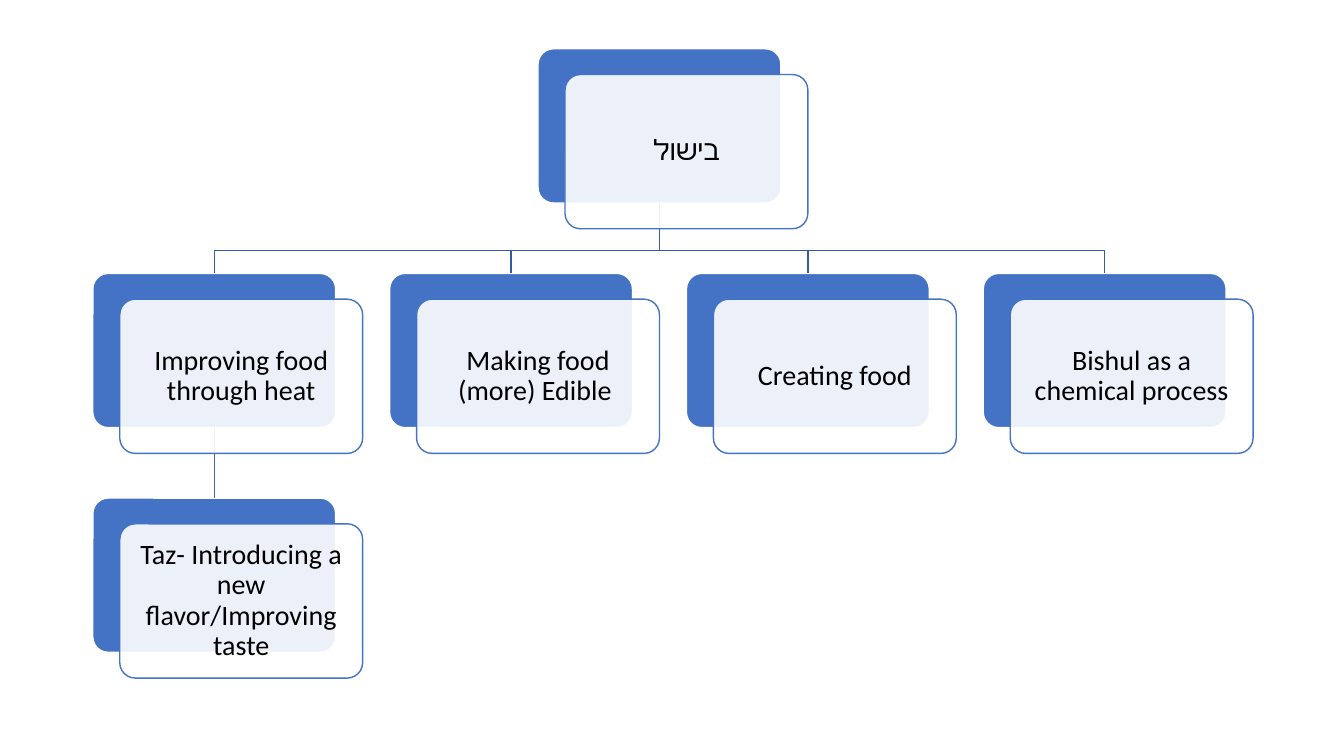
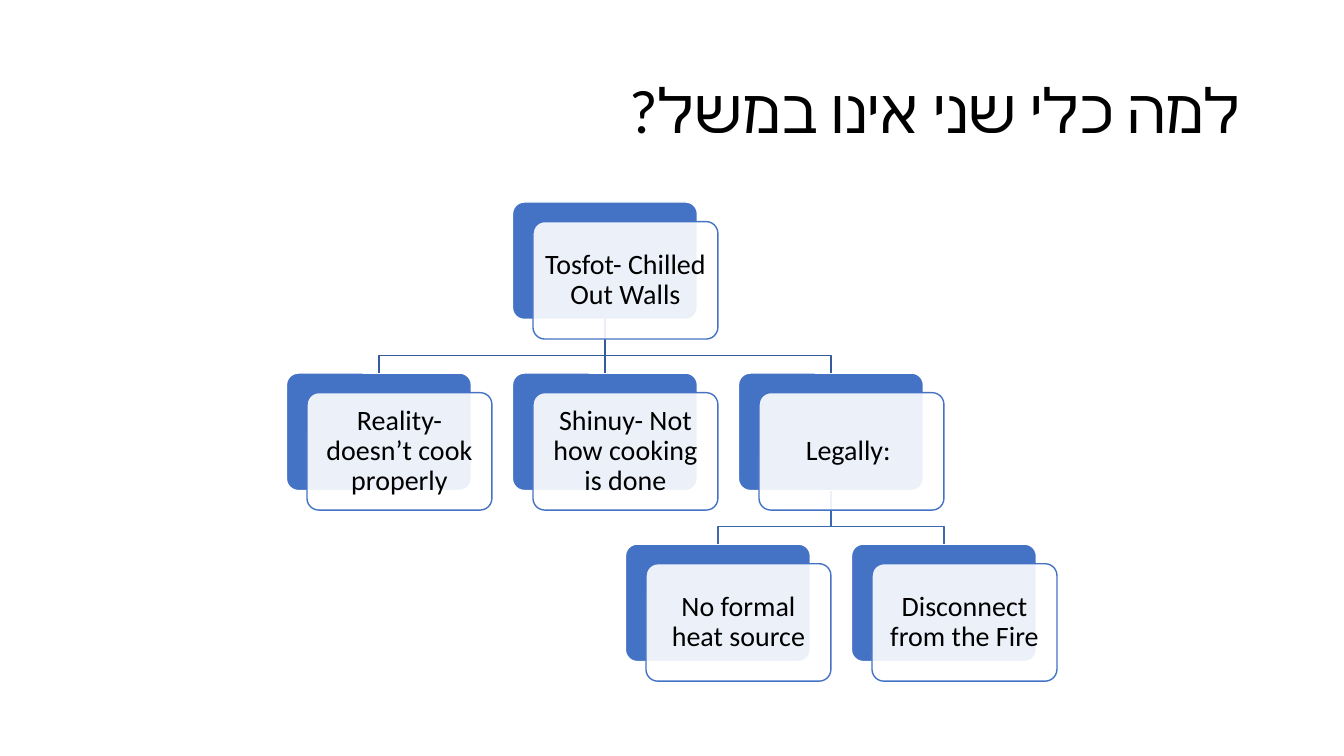
import pptx
import pptx.dml.color
import pptx.enum.shapes
import pptx.enum.text
import pptx.oxml
import pptx.oxml.ns
import pptx.util

Cm = pptx.util.Cm
Pt = pptx.util.Pt

FONT = "Calibri"
ACCENT = "4472C4"
WHITE = "FFFFFF"
BLACK = "000000"
LINK_COLOURS = ["365B9D", "3E67B2"]

CARD_HEIGHT = 0.635
COLUMN_PITCH = 11 / 9
ROW_PITCH = 0.925
OFFSET_X = 1 / 9
OFFSET_Y = 0.106
BEND = 0.67

COOKING_TREE = [
    ("בישול", 1.5, 0, None),
    ("Improving food through heat", 0, 1, 0),
    ("Taz- Introducing a new flavor/Improving taste", 0, 2, 1),
    ("Making food (more) Edible ", 1, 1, 0),
    ("Creating food", 2, 1, 0),
    ("Bishul as a chemical process", 3, 1, 0),
]

VESSEL_TREE = [
    ("Tosfot- Chilled Out Walls", 1, 0, None),
    ("Reality- doesn’t cook properly", 0, 1, 0),
    ("Shinuy- Not how cooking is done", 1, 1, 0),
    ("Legally: ", 2, 1, 0),
    ("No formal heat source", 1.5, 2, 3),
    ("Disconnect from the Fire", 2.5, 2, 3),
]


def colour(hex_string):
    return pptx.dml.color.RGBColor.from_string(hex_string)


def write_text(shape, text, size, alignment):
    text_frame = shape.text_frame
    text_frame.text = text
    text_frame.word_wrap = True
    text_frame.vertical_anchor = pptx.enum.text.MSO_ANCHOR.MIDDLE
    paragraph = text_frame.paragraphs[0]
    paragraph.alignment = alignment
    paragraph.line_spacing = 0.9
    font = paragraph.runs[0].font
    font.size = Pt(size)
    font.name = FONT
    font.color.rgb = colour(BLACK)
    complex_script = pptx.oxml.parse_xml(
        f'<a:cs {pptx.oxml.ns.nsdecls("a")} typeface="{FONT}"/>'
    )
    paragraph.runs[0]._r.get_or_add_rPr().append(complex_script)
    return paragraph


def add_title(slide, text, left, top, width, height):
    title = slide.shapes.add_textbox(Cm(left), Cm(top), Cm(width), Cm(height))
    paragraph = write_text(title, text, 44, pptx.enum.text.PP_ALIGN.RIGHT)
    paragraph._p.get_or_add_pPr().set("rtl", "1")


def add_card(slide, left, top, width, fill, line):
    card = slide.shapes.add_shape(
        pptx.enum.shapes.MSO_SHAPE.ROUNDED_RECTANGLE,
        Cm(left), Cm(top), Cm(width), Cm(width * CARD_HEIGHT),
    )
    card.adjustments[0] = 0.1
    card.shadow.inherit = False
    card.fill.solid()
    card.fill.fore_color.rgb = colour(fill)
    card.line.color.rgb = colour(line)
    card.line.width = Pt(1)
    return card


def add_front_card(slide, left, top, width, text):
    card = add_card(slide, left, top, width, WHITE, ACCENT)
    fill_colour = card._element.spPr.find(".//" + pptx.oxml.ns.qn("a:srgbClr"))
    fill_colour.append(pptx.oxml.parse_xml(
        f'<a:alpha {pptx.oxml.ns.nsdecls("a")} val="90000"/>'
    ))
    text_frame = card.text_frame
    text_frame.margin_left = text_frame.margin_right = Cm(0.21)
    text_frame.margin_top = text_frame.margin_bottom = Cm(0.21)
    write_text(card, text, 20, pptx.enum.text.PP_ALIGN.CENTER)


def add_link(slide, parent, child, hex_string):
    start_x = parent.left + parent.width // 2
    start_y = parent.top + parent.height
    end_x = child.left + child.width // 2
    if start_x == end_x:
        link = slide.shapes.add_connector(
            pptx.enum.shapes.MSO_CONNECTOR.STRAIGHT, start_x, start_y, end_x, child.top
        )
        link.begin_connect(parent, 2)
        link.end_connect(child, 0)
        link._element.spPr.append(pptx.oxml.parse_xml(
            f'<a:effectLst {pptx.oxml.ns.nsdecls("a")}/>'
        ))
    else:
        bend_y = round(start_y + (child.top - start_y) * BEND)
        outline = slide.shapes.build_freeform(start_x, start_y)
        outline.add_line_segments(
            [(start_x, bend_y), (end_x, bend_y), (end_x, child.top)], close=False
        )
        link = outline.convert_to_shape()
        link.fill.background()
        link.shadow.inherit = False
    link.line.color.rgb = colour(hex_string)
    link.line.width = Pt(1)


def add_hierarchy(slide, nodes, left, top, card_width):
    places = [
        (left + column * COLUMN_PITCH * card_width, top + row * ROW_PITCH * card_width)
        for _, column, row, _ in nodes
    ]
    back_cards = [add_card(slide, x, y, card_width, ACCENT, WHITE) for x, y in places]
    for (_, _, row, parent), back_card in zip(nodes, back_cards):
        if parent is not None:
            add_link(slide, back_cards[parent], back_card, LINK_COLOURS[row - 1])
    for (text, _, _, _), (x, y) in zip(nodes, places):
        add_front_card(
            slide, x + OFFSET_X * card_width, y + OFFSET_Y * card_width, card_width, text
        )


def main():
    presentation = pptx.Presentation()
    presentation.slide_width = Cm(33.87)
    presentation.slide_height = Cm(19.05)
    blank_layout = presentation.slide_layouts[6]

    cooking_slide = presentation.slides.add_slide(blank_layout)
    add_hierarchy(cooking_slide, COOKING_TREE, 2.34, 1.23, 6.12)

    vessel_slide = presentation.slides.add_slide(blank_layout)
    add_title(vessel_slide, "למה כלי שני אינו במשל? ", 2.33, 1.01, 29.21, 3.68)
    add_hierarchy(vessel_slide, VESSEL_TREE, 7.22, 5.09, 4.66)

    presentation.save("out.pptx")


if __name__ == "__main__":
    main()
